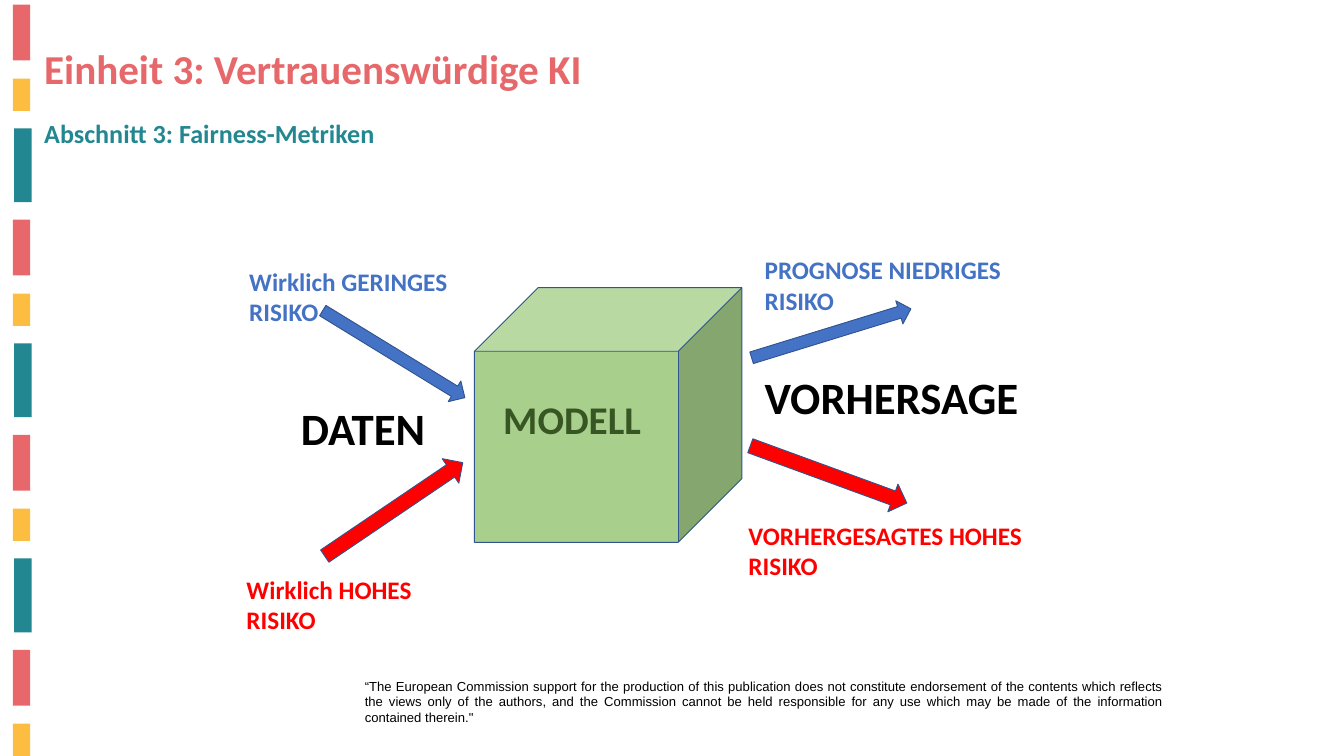
import pptx
import pptx.util
import pptx.dml.color
import pptx.enum.shapes
import pptx.enum.text

COLUMNS, ROWS = 20, 11.25
CELL = pptx.util.Inches(1)
SHAPE = pptx.enum.shapes.MSO_SHAPE
ALIGN = pptx.enum.text.PP_ALIGN

COLORS = {
    "coral": "E8676A",
    "title": "E7686A",
    "yellow": "FDBD40",
    "teal": "238791",
    "cube": "A8D08C",
    "model": "385623",
    "low": "4472C4",
    "high": "FF0000",
    "outline": "31538F",
    "text": "000000",
}


def rgb(name):
    return pptx.dml.color.RGBColor.from_string(COLORS[name])


def place(box, left, top, width, height):
    x, y = box[:2]
    return [round(v * CELL) for v in (x + left, y + top, width, height)]


def add_shape(s, kind, frame, fill, outline=None, rotation=0):
    sp = s.shapes.add_shape(kind, *frame)
    sp.shadow.inherit = False
    sp.fill.solid()
    sp.fill.fore_color.rgb = rgb(fill)
    if outline:
        sp.line.color.rgb = rgb(outline)
        sp.line.width = pptx.util.Pt(1)
    else:
        sp.line.fill.background()
    sp.rotation = rotation
    return sp


def add_text(s, frame, text, size, color, bold=True, font="Calibri",
             align=ALIGN.LEFT, spacing=None):
    tf = s.shapes.add_textbox(*frame).text_frame
    tf.word_wrap = True
    p = tf.paragraphs[0]
    p.alignment = align
    if spacing:
        p.line_spacing = spacing
    r = p.add_run()
    r.text = text
    r.font.name = font
    r.font.size = pptx.util.Pt(size)
    r.font.bold = bold
    r.font.color.rgb = rgb(color)


def add_stripes(s, box):
    width, height = box[2:]
    pitch = 3.2
    pattern = [
        ("coral", 0, 0, 0.83),
        ("yellow", 0, 1.1, 0.48),
        ("teal", 0.02, 1.84, 1.1),
    ]
    for cycle in range(4):
        for color, left, offset, length in pattern:
            top = cycle * pitch + offset
            if top < height:
                frame = place(box, left, top, width, length)
                add_shape(s, SHAPE.RECTANGLE, frame, color)


def add_heading(s, box):
    width = box[2]
    add_text(s, place(box, 0, 0, width, 0.61),
             "Einheit 3: Vertrauenswürdige KI", 44, "title", spacing=0.9)
    add_text(s, place(box, 0, 1.02, width, 0.57),
             "Abschnitt 3: Fairness-Metriken", 28, "teal")


def add_diagram(s, box):
    cube = add_shape(s, SHAPE.CUBE, place(box, 3.56, 0.58, 3.98, 3.79),
                     "cube", "outline")
    cube.adjustments[0] = 0.25

    arrows = [
        (1.12, 1.39, 0.36, "low", 31.5),
        (1.12, 3.66, 0.44, "high", 325.9),
        (7.63, 1.08, 0.36, "low", 342.9),
        (7.59, 3.14, 0.44, "high", 20.1),
    ]
    for left, top, height, color, rotation in arrows:
        add_shape(s, SHAPE.RIGHT_ARROW, place(box, left, top, 2.48, height),
                  color, "outline", rotation)

    labels = [
        (0.11, 0.21, 3.46, 1.01, "Wirklich GERINGES RISIKO", 27, "low"),
        (0.07, 4.79, 3.5, 1.01, "Wirklich HOHES RISIKO", 27, "high"),
        (7.78, 0.04, 4.55, 1.01, "PROGNOSE NIEDRIGES RISIKO", 27, "low"),
        (7.54, 3.99, 4.96, 1.01, "VORHERGESAGTES HOHES RISIKO", 27, "high"),
        (0.88, 2.21, 2.24, 0.91, "DATEN", 48, "text"),
        (3.89, 2.14, 2.42, 0.81, "MODELL", 42, "model"),
        (7.78, 1.75, 4.81, 0.91, "VORHERSAGE", 48, "text"),
    ]
    for left, top, width, height, text, size, color in labels:
        add_text(s, place(box, left, top, width, height), text, size, color)


def add_disclaimer(s, box):
    add_text(
        s, place(box, 0, 0, *box[2:]),
        "“The European Commission support for the production of this "
        "publication does not constitute endorsement of the contents which "
        "reflects the views only of the authors, and the Commission cannot be "
        "held responsible for any use which may be made of the information "
        "contained therein.\"",
        14, "text", bold=False, font="Arial", align=ALIGN.JUSTIFY)


def main():
    prs = pptx.Presentation()
    prs.slide_width = round(COLUMNS * CELL)
    prs.slide_height = round(ROWS * CELL)
    s = prs.slides.add_slide(prs.slide_layouts[6])
    add_stripes(s, (0.19, 0.07, 0.26, ROWS - 0.07))
    add_disclaimer(s, (5.33, 10.04, 12.08, 0.81))
    add_diagram(s, (3.5, 3.7, 12.5, 5.8))
    add_heading(s, (0.56, 0.68, 10.98, 1.59))
    prs.save("out.pptx")


if __name__ == "__main__":
    main()
